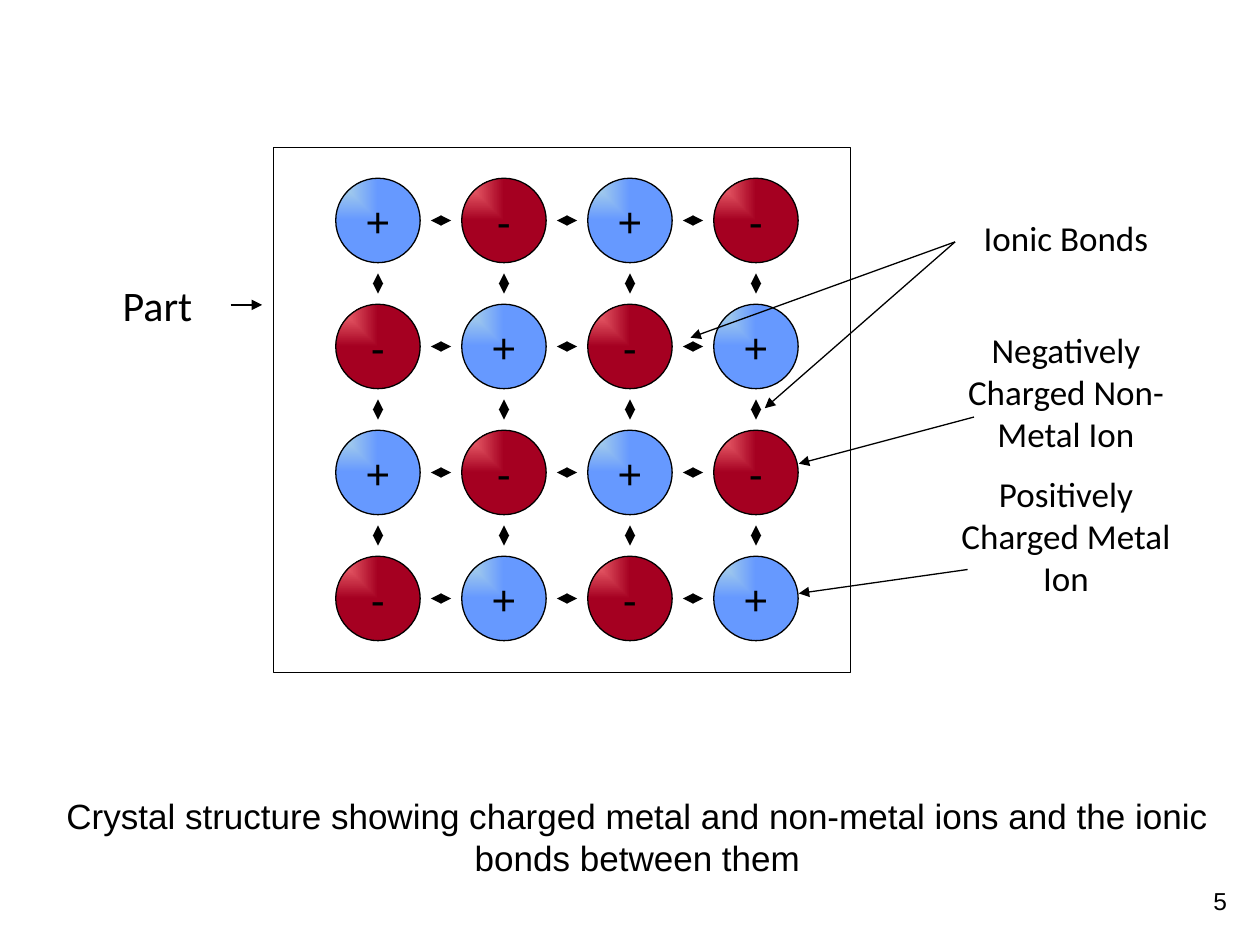
"""Build a slide showing an ionic crystal lattice with labelled ions and bonds."""
from lxml import etree
from pptx import Presentation
from pptx.dml.color import RGBColor
from pptx.enum.shapes import MSO_CONNECTOR, MSO_SHAPE
from pptx.enum.text import MSO_ANCHOR, PP_ALIGN
from pptx.oxml.ns import qn
from pptx.util import Inches, Pt

OVAL, RECTANGLE = MSO_SHAPE.OVAL, MSO_SHAPE.RECTANGLE
STRAIGHT = MSO_CONNECTOR.STRAIGHT
CENTER, MIDDLE = PP_ALIGN.CENTER, MSO_ANCHOR.MIDDLE

BLACK = "000000"
LINE_WIDTH = 0.75
IONS = [("+", ("BBE0E3", "6699FF")), ("-", ("FF7C80", "A50021"))]
GRID_SIZE = 4
FIRST_X, FIRST_Y, PITCH = 3, 1.75, 1
DIAMETER, BOND_START, BOND_END = 0.67, 0.42, 0.58
PART_FRAME = (2.17, 1.17, 4.58, 4.17)

LABELS = [
    ((7.42, 1.67, 2.08, 3.67), "Calibri", 20, [
        ("Ionic Bonds", 0),
        ("Negatively Charged Non-Metal Ion", 40),
        ("Positively Charged Metal Ion", 10),
    ]),
    ((0.5, 2.17, 1.5, 0.5), "Calibri", 24, [("Part", 0)]),
    ((0.31, 6.26, 9.5, 0.77), "Arial", 20, [
        ("Crystal structure showing charged metal and non-metal ions "
         "and the ionic bonds between them", 0),
    ]),
    ((9.51, 6.98, 0.35, 0.36), "Arial", 14, [("5", 0)]),
]

POINTERS = [
    ((7.58, 1.92), (5.48, 2.68)),
    ((7.58, 1.92), (6.07, 3.24)),
    ((7.73, 3.31), (6.34, 3.68)),
    ((7.68, 4.52), (6.34, 4.71)),
    ((1.83, 2.42), (2.08, 2.42)),
]


def color(value):
    return RGBColor.from_string(value)


def style_line(line):
    line.color.rgb = color(BLACK)
    line.width = Pt(LINE_WIDTH)


def style_paragraph(paragraph, font_name, size):
    paragraph.alignment = CENTER
    paragraph.font.name = font_name
    paragraph.font.size = Pt(size)
    paragraph.font.color.rgb = color(BLACK)


def add_outlined_shape(slide, kind, box):
    shape = slide.shapes.add_shape(kind, *map(Inches, box))
    shape.shadow.inherit = False
    style_line(shape.line)
    return shape


def fill_from_corner(shape, colors):
    shape.fill.gradient()
    for stop, value in zip(shape.fill.gradient_stops, colors):
        stop.color.rgb = color(value)
    gradient = shape._element.spPr.find(qn("a:gradFill"))
    linear = gradient.find(qn("a:lin"))
    corner_path = etree.Element(qn("a:path"), path="rect")
    etree.SubElement(corner_path, qn("a:fillToRect"), r="100000", b="100000")
    gradient.replace(linear, corner_path)


def add_ion(slide, x, y, sign, colors):
    box = (x - DIAMETER / 2, y - DIAMETER / 2, DIAMETER, DIAMETER)
    ion = add_outlined_shape(slide, OVAL, box)
    fill_from_corner(ion, colors)
    frame = ion.text_frame
    frame.word_wrap = False
    frame.vertical_anchor = MIDDLE
    frame.text = sign
    style_paragraph(frame.paragraphs[0], "Arial", 24)


def add_arrow(slide, start, end, both_ends=False):
    arrow = slide.shapes.add_connector(STRAIGHT, *map(Inches, (*start, *end)))
    style_line(arrow.line)
    properties = arrow._element.spPr
    outline = properties.find(qn("a:ln"))
    for tag in ("a:headEnd", "a:tailEnd") if both_ends else ("a:tailEnd",):
        etree.SubElement(outline, qn(tag), type="triangle")
    etree.SubElement(properties, qn("a:effectLst"))


def add_label(slide, box, font_name, size, paragraphs):
    frame = slide.shapes.add_textbox(*map(Inches, box)).text_frame
    frame.word_wrap = True
    frame.text = "\n".join(text for text, _ in paragraphs)
    for paragraph, (_, gap) in zip(frame.paragraphs, paragraphs):
        style_paragraph(paragraph, font_name, size)
        paragraph.space_before = Pt(gap)


def add_lattice(slide):
    centers = [(column, row, FIRST_X + column * PITCH, FIRST_Y + row * PITCH)
               for column in range(GRID_SIZE) for row in range(GRID_SIZE)]
    for column, row, x, y in centers:
        add_ion(slide, x, y, *IONS[(column + row) % 2])
    for column, row, x, y in centers:
        if row < GRID_SIZE - 1:
            add_arrow(slide, (x, y + BOND_START), (x, y + BOND_END), True)
        if column < GRID_SIZE - 1:
            add_arrow(slide, (x + BOND_START, y), (x + BOND_END, y), True)


def main():
    presentation = Presentation()
    presentation.slide_width = Inches(10)
    presentation.slide_height = Inches(7.5)
    slide = presentation.slides.add_slide(presentation.slide_layouts[6])
    add_lattice(slide)
    add_outlined_shape(slide, RECTANGLE, PART_FRAME).fill.background()
    for label in LABELS:
        add_label(slide, *label)
    for start, end in POINTERS:
        add_arrow(slide, start, end)
    presentation.save("out.pptx")


if __name__ == "__main__":
    main()
